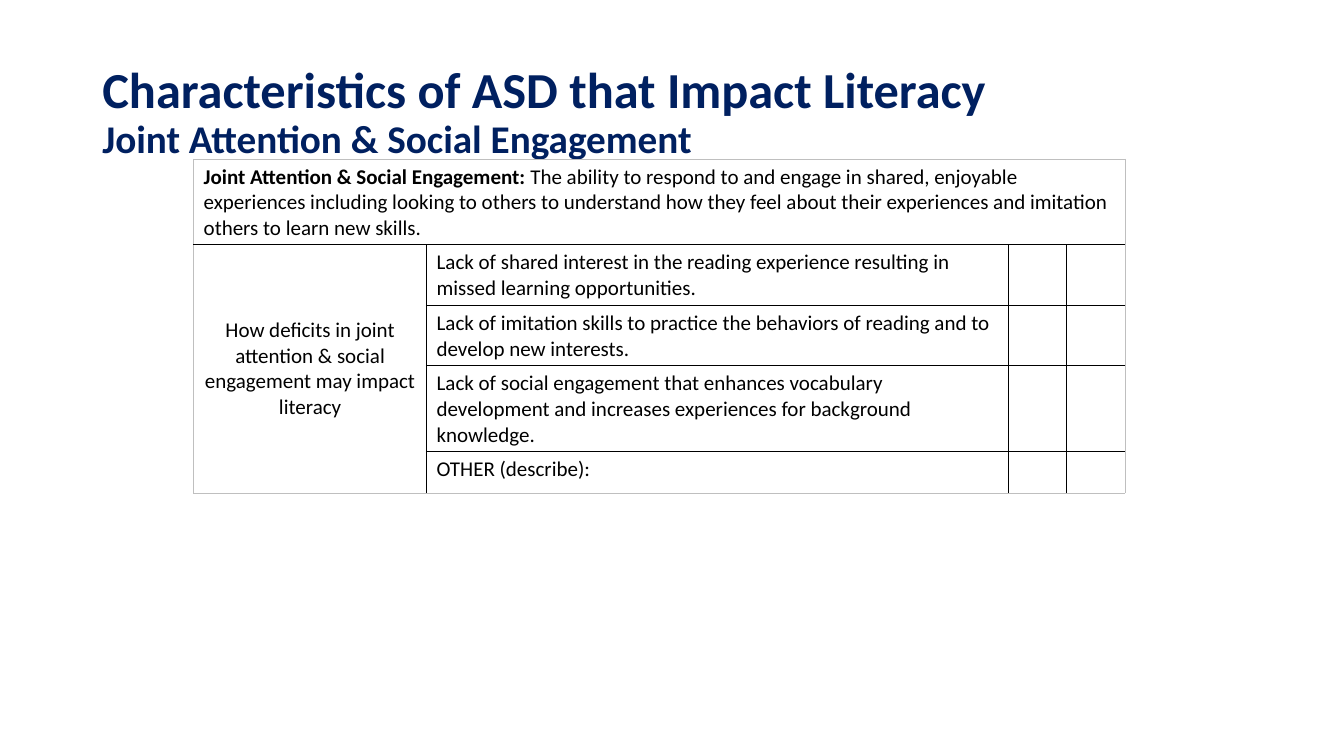
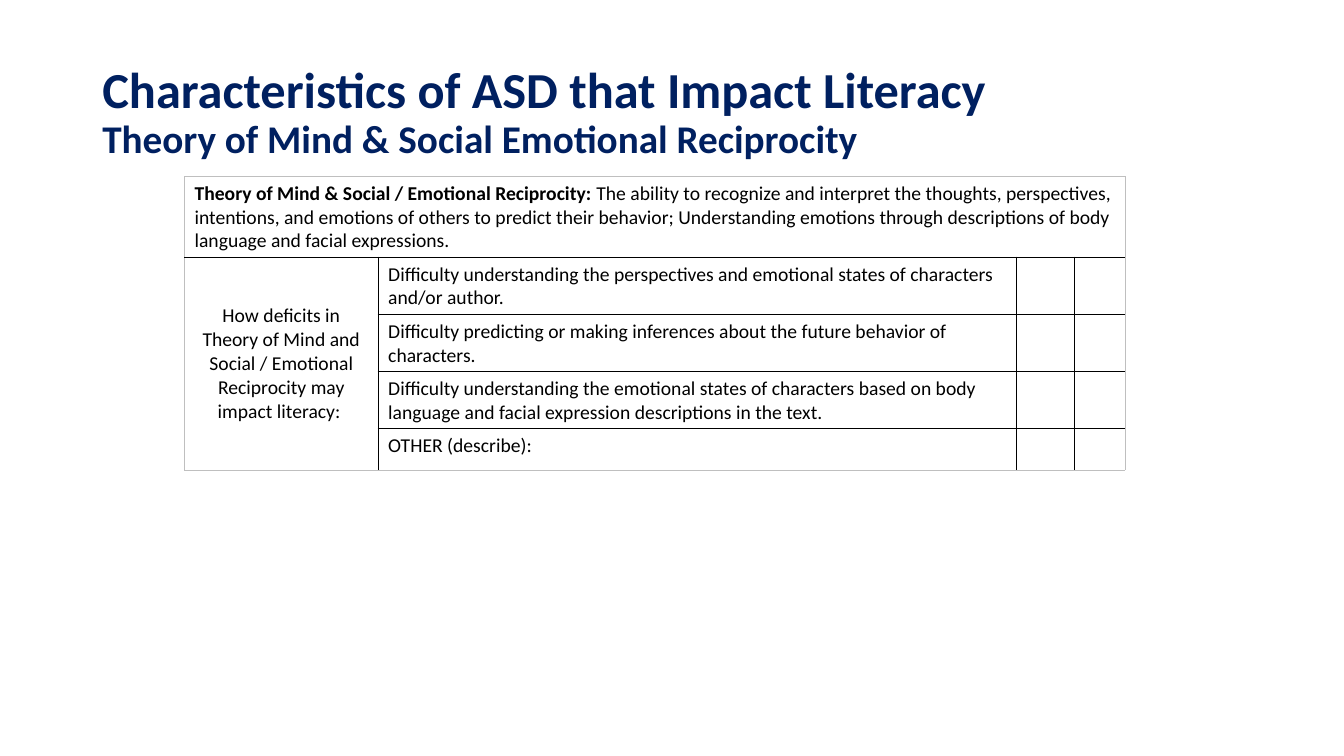
from dataclasses import dataclass

from lxml import etree
from pptx import Presentation
from pptx.dml.color import RGBColor
from pptx.enum.text import MSO_ANCHOR, PP_ALIGN
from pptx.oxml.ns import qn
from pptx.slide import Slide
from pptx.table import Table, _Cell
from pptx.text.text import Font
from pptx.util import Cm, Pt

LEFT, CENTER = PP_ALIGN.LEFT, PP_ALIGN.CENTER
TOP, MIDDLE = MSO_ANCHOR.TOP, MSO_ANCHOR.MIDDLE
PLAIN = "{2D5ABB26-0587-4C30-8999-92F81FD0307C}"  # table style without grid


@dataclass(frozen=True)
class Theme:
    font: str = "Calibri"
    navy: str = "002060"
    ink: str = "000000"
    frame: str = "BFBFBF"
    head: int = 36
    sub: int = 28
    rule: float = 1
    edge: float = 0.5


@dataclass(frozen=True)
class Topic:
    sub: str
    term: str
    gloss: str
    cause: str
    items: tuple[str, ...]
    left: float
    top: float
    cols: tuple[float, ...]
    size: int


THEME = Theme()
HEAD = "Characteristics of ASD that Impact Literacy"
OTHER = "OTHER (describe):"
ROW = 1.04

TOPICS = (
    Topic(
        sub="Joint Attention & Social Engagement",
        term="Joint Attention & Social Engagement: ",
        gloss="The ability to respond to and engage in shared, enjoyable "
        "experiences including looking to others to understand how they feel "
        "about their experiences and imitation others to learn new skills.",
        cause="How deficits in joint attention & social engagement may impact literacy",
        items=(
            "Lack of shared interest in the reading experience resulting in "
            "missed learning opportunities.",
            "Lack of imitation skills to practice the behaviors of reading and "
            "to develop new interests.",
            "Lack of social engagement that enhances vocabulary development and "
            "increases experiences for background knowledge.",
        ),
        left=4.88, top=4.01, cols=(5.87, 14.66, 1.47, 1.47), size=15,
    ),
    Topic(
        sub="Theory of Mind & Social Emotional Reciprocity",
        term="Theory of Mind & Social / Emotional Reciprocity: ",
        gloss="The ability to recognize and interpret the thoughts, "
        "perspectives, intentions, and emotions of others to predict their "
        "behavior; Understanding emotions through descriptions of body language "
        "and facial expressions.",
        cause="How deficits in Theory of Mind and Social / Emotional Reciprocity "
        "may impact literacy: ",
        items=(
            "Difficulty understanding the perspectives and emotional states of "
            "characters and/or author.",
            "Difficulty predicting or making inferences about the future "
            "behavior of characters.",
            "Difficulty understanding the emotional states of characters based "
            "on body language and facial expression descriptions in the text.",
        ),
        left=4.65, top=4.45, cols=(4.88, 16.08, 1.47, 1.27), size=14,
    ),
)


def style(font: Font, size: int, color: str) -> None:
    font.name = THEME.font
    font.size = Pt(size)
    font.color.rgb = RGBColor.from_string(color)


# Title
def add_title(slide: Slide, sub: str) -> None:
    box = slide.shapes.add_textbox(Cm(2.33), Cm(1.02), Cm(29.21), Cm(3.68))
    frame = box.text_frame
    frame.word_wrap = True
    frame.vertical_anchor = MIDDLE
    para = frame.paragraphs[0]
    para.line_spacing = 0.9
    style(para.font, THEME.head, THEME.navy)
    para.font.bold = True
    para.add_run().text = HEAD
    para.add_line_break()
    run = para.add_run()
    run.text = sub
    run.font.size = Pt(THEME.sub)


# Table cells
def rule_cell(cell: _Cell, outer: dict[str, bool]) -> None:
    """Draw grey lines on the table's outside and black ones within."""
    props = cell._tc.get_or_add_tcPr()
    for side, out in outer.items():
        width = THEME.edge if out else THEME.rule
        line = etree.SubElement(props, qn(f"a:ln{side}"), w=str(Pt(width)))
        fill = etree.SubElement(line, qn("a:solidFill"))
        color = THEME.frame if out else THEME.ink
        etree.SubElement(fill, qn("a:srgbClr"), val=color)


def rule_table(table: Table) -> None:
    rows, cols = len(table.rows), len(table.columns)
    for r in range(rows):
        for c in range(cols):
            cell = table.cell(r, c)
            if not cell.is_spanned:
                high = cell.span_height if cell.is_merge_origin else 1
                wide = cell.span_width if cell.is_merge_origin else 1
                rule_cell(cell, {"L": c == 0, "R": c + wide == cols,
                                 "T": r == 0, "B": r + high == rows})
            cell.fill.background()


def write(cell: _Cell, text: str, size: int, bold: str = "",
          align: PP_ALIGN = LEFT, anchor: MSO_ANCHOR = TOP) -> None:
    cell.vertical_anchor = anchor
    para = cell.text_frame.paragraphs[0]
    para.alignment = align
    style(para.font, size, THEME.ink)
    if bold:
        lead = para.add_run()
        lead.text = bold
        lead.font.bold = True
    para.add_run().text = text


# Table
def add_table(slide: Slide, topic: Topic) -> None:
    items = (*topic.items, OTHER)
    rows, cols = len(items) + 1, len(topic.cols)
    frame = slide.shapes.add_table(
        rows, cols, Cm(topic.left), Cm(topic.top),
        Cm(sum(topic.cols)), Cm(ROW * rows))
    table = frame.table
    table.first_row = table.horz_banding = False
    next(frame.element.iter(qn("a:tableStyleId"))).text = PLAIN
    for col, width in zip(table.columns, topic.cols):
        col.width = Cm(width)
    for row in table.rows:
        row.height = Cm(ROW)

    table.cell(0, 0).merge(table.cell(0, cols - 1))
    table.cell(1, 0).merge(table.cell(rows - 1, 0))
    rule_table(table)

    write(table.cell(0, 0), topic.gloss, topic.size, bold=topic.term)
    write(table.cell(1, 0), topic.cause, topic.size, align=CENTER, anchor=MIDDLE)
    for r, item in enumerate(items, 1):
        write(table.cell(r, 1), item, topic.size)


def main() -> None:
    deck = Presentation()
    deck.slide_width, deck.slide_height = Cm(33.87), Cm(19.05)
    blank = deck.slide_layouts[6]
    for topic in TOPICS:
        slide = deck.slides.add_slide(blank)
        add_title(slide, topic.sub)
        add_table(slide, topic)
    deck.save("out.pptx")


if __name__ == "__main__":
    main()
